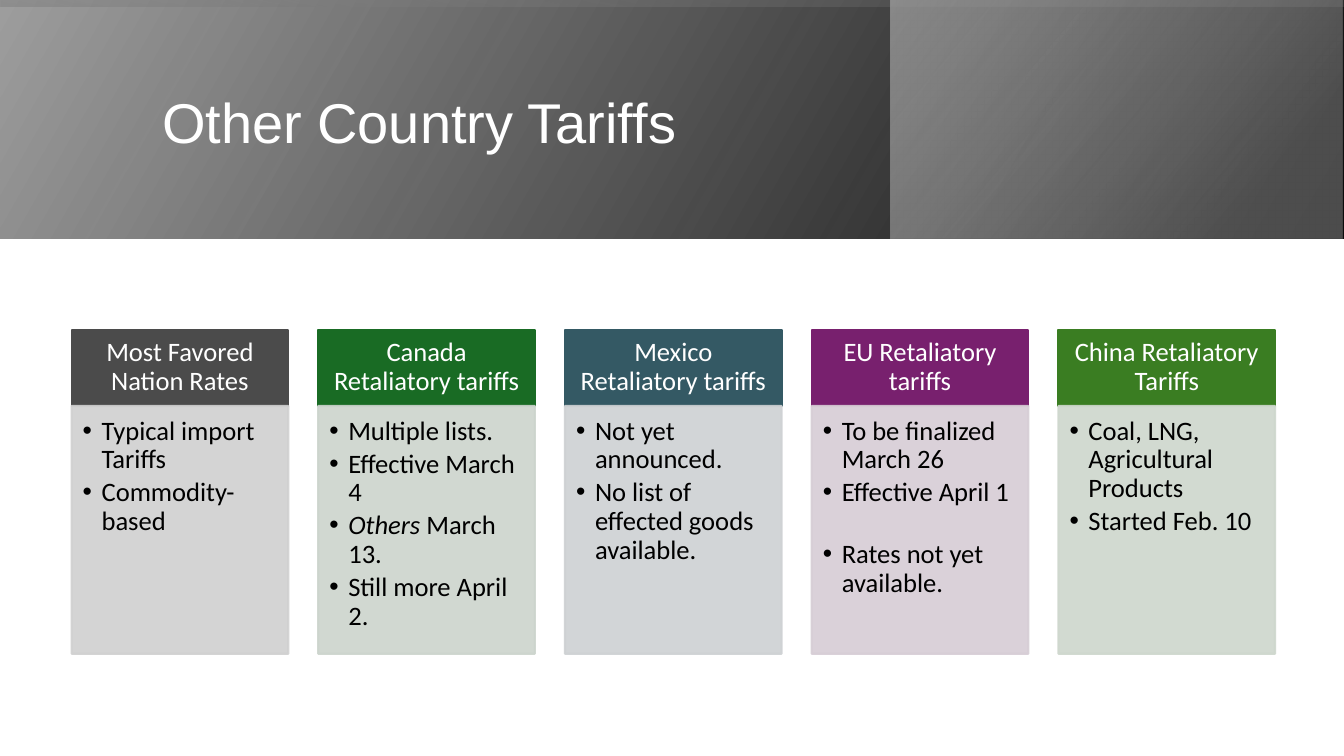
from lxml import etree
from pptx import Presentation
from pptx.dml.color import RGBColor
from pptx.enum.shapes import MSO_SHAPE
from pptx.enum.text import MSO_ANCHOR, PP_ALIGN
from pptx.oxml.ns import qn
from pptx.util import Pt

RECTANGLE = MSO_SHAPE.RECTANGLE
TOP, MIDDLE = MSO_ANCHOR.TOP, MSO_ANCHOR.MIDDLE
LEFT, CENTER = PP_ALIGN.LEFT, PP_ALIGN.CENTER

COLOURS = {
    "black": "000000", "white": "FFFFFF", "grey": "9E9E9E",
    "mid grey": "6A6A6A", "pale grey": "D3D3D3",
    "favored": "4B4B4B", "favored tint": "D0D0D0",
    "canada": "196B24", "canada tint": "CCD4CD",
    "mexico": "345964", "mexico tint": "CED1D3",
    "eu": "78206E", "eu tint": "D6CDD5",
    "china": "3A7D22", "china tint": "CED7CD",
}
RGB = {name: RGBColor.from_string(code) for name, code in COLOURS.items()}


def set_opacity(shape, percents):
    """Give the shape's fill and line colours, in order, these opacities."""
    colours = list(shape.element.spPr.iter(qn("a:srgbClr")))
    for colour, percent in zip(colours, percents):
        etree.SubElement(colour, qn("a:alpha"), val=str(percent * 1000))


def add_panel(left, top, width, height, colour, insets, anchor):
    """Add a filled, outlined rectangle with its text frame prepared."""
    panel = slide.shapes.add_shape(RECTANGLE, Pt(left), Pt(top), Pt(width), Pt(height))
    panel.shadow.inherit = False
    panel.fill.solid()
    panel.fill.fore_color.rgb = RGB[colour]
    panel.line.color.rgb = RGB[colour]
    panel.line.width = Pt(1.5)
    frame = panel.text_frame
    frame.word_wrap = True
    frame.vertical_anchor = anchor
    (frame.margin_left, frame.margin_top,
     frame.margin_right, frame.margin_bottom) = [Pt(inset) for inset in insets]
    return panel


prs = Presentation()
prs.slide_width, prs.slide_height = Pt(960), Pt(540)
slide = prs.slides.add_slide(prs.slide_layouts[6])

# Banner: three mirrored gradient layers
# left, top, width, height, rotation, gradient angle, stops (position, colour, opacity)
BANNER = 170.64
layers = [
    (0, 0, 960, BANNER, 0, 30, [(0, "black", 96), (1, "grey", 100)]),
    (636.2, 0, 323, BANNER, 0, 40, [(0.19, "mid grey", 68), (1, "pale grey", 48)]),
    ((960 - BANNER) / 2, (BANNER - 960) / 2, BANNER, 960, 270, 10,
     [(0.23, "grey", 16), (0.99, "black", 45)]),
]
for left, top, width, height, rotation, angle, stops in layers:
    layer = slide.shapes.add_shape(RECTANGLE, Pt(left), Pt(top), Pt(width), Pt(height))
    layer.shadow.inherit = False
    layer.rotation = rotation
    layer.element.spPr.xfrm.set("flipH", "1")
    layer.line.fill.background()
    layer.fill.gradient()
    layer.fill.gradient_angle = angle
    for stop, (position, colour, opacity) in zip(layer.fill.gradient_stops, stops):
        stop.position = position
        stop.color.rgb = RGB[colour]
    set_opacity(layer, [opacity for position, colour, opacity in stops])

title = slide.shapes.add_textbox(Pt(108.7), Pt(27.4), Pt(765.4), Pt(123.8)).text_frame
title.word_wrap = True
title.vertical_anchor = MIDDLE
heading = title.paragraphs[0]
heading.text = "Other Country Tariffs"
heading.line_spacing = 0.9
heading.font.name = "Arial"
heading.font.size = Pt(40)
heading.font.color.rgb = RGB["white"]

# Tariff columns: each point is a list of (text, italic) runs or a plain string
columns = [
    ("favored", "Most Favored Nation Rates", ["Typical import Tariffs", "Commodity- based"]),
    ("canada", "Canada Retaliatory tariffs",
     ["Multiple lists.", "Effective March 4",
      [("Others", True), (" March 13.", False)], "Still more April 2."]),
    ("mexico", "Mexico Retaliatory tariffs",
     ["Not yet announced.", "No list of effected goods available."]),
    ("eu", "EU Retaliatory tariffs",
     ["To be finalized March 26", "Effective April 1", "Rates not yet available."]),
    ("china", "China Retaliatory Tariffs",
     ["Coal, LNG, Agricultural Products", "Started Feb. 10"]),
]
FIRST_LEFT, PITCH, WIDTH = 51.1, 176.22, 154.8
HEADER_TOP, HEADER_HEIGHT, BODY_TOP, BODY_HEIGHT = 235.6, 54.2, 290, 177
LINE_GAP = 20.5
INDENT = Pt(13.5)

for index, (country, name, points) in enumerate(columns):
    left = FIRST_LEFT + index * PITCH
    header = add_panel(left, HEADER_TOP, WIDTH, HEADER_HEIGHT, country,
                       (10.6, 6, 10.6, 6), MIDDLE)
    label = header.text_frame.paragraphs[0]
    label.text = name
    label.alignment = CENTER
    label.line_spacing = 0.9
    label.font.name = "Calibri"
    label.font.size = Pt(19)
    label.font.color.rgb = RGB["white"]

    body = add_panel(left, BODY_TOP, WIDTH, BODY_HEIGHT, country + " tint",
                     (8, 8, 10.6, 12), TOP)
    set_opacity(body, [90, 90])
    for number, point in enumerate(points):
        frame = body.text_frame
        item = frame.add_paragraph() if number else frame.paragraphs[0]
        properties = item._p.get_or_add_pPr()
        properties.set("marL", str(INDENT))
        properties.set("indent", str(-INDENT))
        etree.SubElement(properties, qn("a:buFont"), typeface="Arial")
        etree.SubElement(properties, qn("a:buChar"), char="•")
        item.alignment = LEFT
        item.line_spacing = 0.9
        item.space_after = Pt(3)
        if point == "Rates not yet available.":
            item.space_before = Pt(LINE_GAP)
        item.font.name = "Calibri"
        item.font.size = Pt(19)
        item.font.color.rgb = RGB["black"]
        if isinstance(point, str):
            item.text = point
        else:
            for text, italic in point:
                run = item.add_run()
                run.text = text
                run.font.italic = italic

prs.save("out.pptx")
